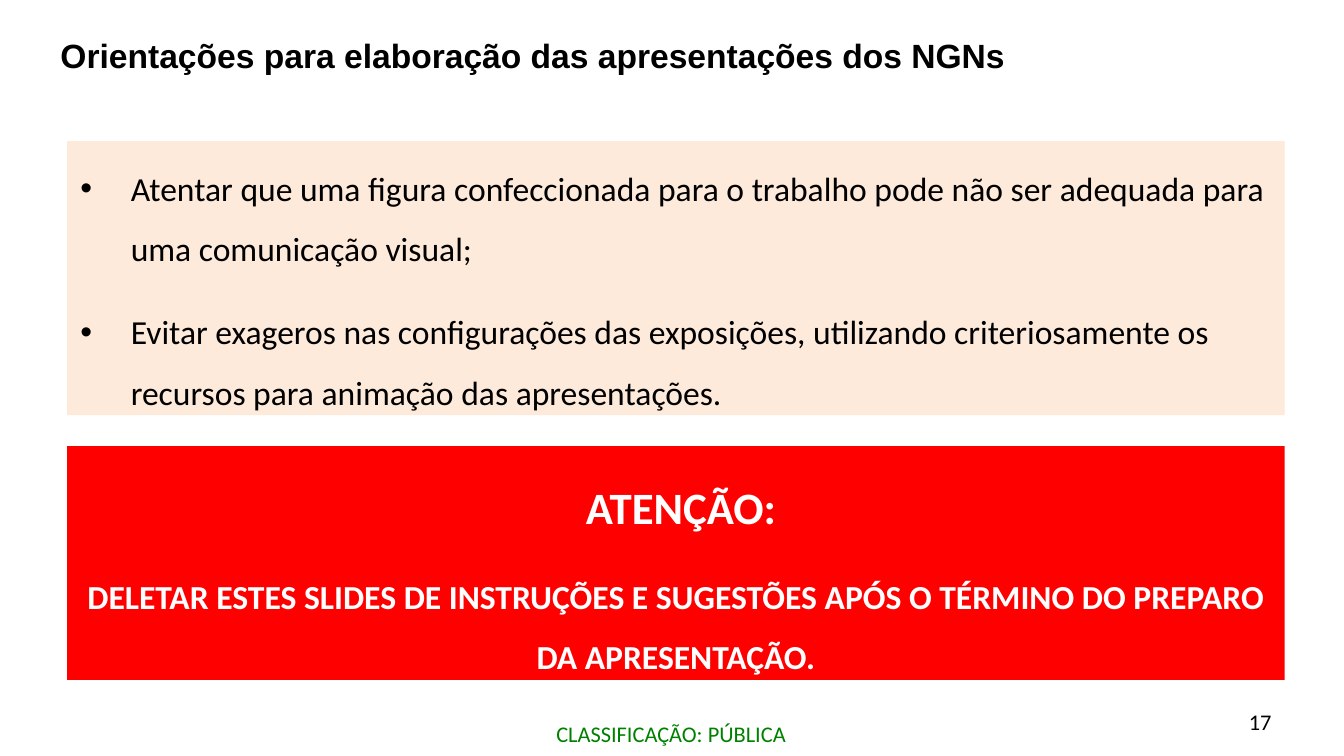
from pptx import Presentation
from pptx.dml.color import RGBColor
from pptx.enum.shapes import MSO_SHAPE
from pptx.enum.text import MSO_ANCHOR, MSO_AUTO_SIZE, PP_ALIGN
from pptx.oxml.xmlchemy import OxmlElement
from pptx.util import Pt

PANEL_LEFT = 36
PANEL_WIDTH = 652.3
BULLET_INDENT = 27


def color(value):
    return RGBColor.from_string(value)


def set_attributes(target, values):
    for name, value in values.items():
        setattr(target, name, value)


def format_frame(shape, anchor=MSO_ANCHOR.TOP, inset_x=7.2, inset_y=3.6):
    set_attributes(shape.text_frame, {
        "word_wrap": True,
        "auto_size": MSO_AUTO_SIZE.NONE,
        "vertical_anchor": anchor,
        "margin_left": Pt(inset_x),
        "margin_right": Pt(inset_x),
        "margin_top": Pt(inset_y),
        "margin_bottom": Pt(inset_y),
    })


def write_line(paragraph, text, size, text_color, bold=False,
               font_name="Calibri", align=PP_ALIGN.LEFT):
    paragraph.alignment = align
    run = paragraph.add_run()
    run.text = text
    set_attributes(run.font, {"name": font_name, "size": Pt(size), "bold": bold})
    run.font.color.rgb = color(text_color)


def add_bullet(paragraph):
    properties = paragraph._p.get_or_add_pPr()
    properties.set("marL", str(Pt(BULLET_INDENT)))
    properties.set("indent", str(-Pt(BULLET_INDENT)))
    font = OxmlElement("a:buFont")
    font.set("typeface", "Arial")
    bullet = OxmlElement("a:buChar")
    bullet.set("char", "•")
    properties.extend([font, bullet])


def add_title(slide, text):
    title = slide.shapes.title
    set_attributes(title, {
        "left": Pt(25.2), "top": Pt(15.1), "width": Pt(550), "height": Pt(28.8),
    })
    format_frame(title)
    write_line(title.text_frame.paragraphs[0], text, 18, "000000", True, "Arial")


def add_label(slide, text, left, top, width, height, text_color, align, **frame):
    label = slide.shapes.add_textbox(Pt(left), Pt(top), Pt(width), Pt(height))
    format_frame(label, **frame)
    write_line(label.text_frame.paragraphs[0], text, 12, text_color, align=align)


def add_panel(slide, top, height, fill, lines, text_color,
              bold=False, bulleted=False, align=PP_ALIGN.LEFT):
    panel = slide.shapes.add_shape(
        MSO_SHAPE.RECTANGLE, Pt(PANEL_LEFT), Pt(top), Pt(PANEL_WIDTH), Pt(height))
    panel.shadow.inherit = False
    panel.fill.solid()
    panel.fill.fore_color.rgb = color(fill)
    panel.line.fill.background()
    format_frame(panel)
    frame = panel.text_frame
    for index, (text, size) in enumerate(lines):
        paragraph = frame.add_paragraph() if index else frame.paragraphs[0]
        set_attributes(paragraph, {
            "line_spacing": 1.5,
            "space_before": Pt(6 if index else 0),
            "space_after": Pt(6),
        })
        if bulleted:
            add_bullet(paragraph)
        write_line(paragraph, text, size, text_color, bold, align=align)


def main():
    presentation = Presentation()
    set_attributes(presentation, {"slide_width": Pt(720), "slide_height": Pt(405)})
    slide = presentation.slides.add_slide(presentation.slide_layouts[5])
    add_title(slide, "Orientações para elaboração das apresentações dos NGNs")
    add_panel(slide, 75.6, 146.9, "FDEADA", [
        ("Atentar que uma figura confeccionada para o trabalho pode não ser "
         "adequada para uma comunicação visual;", 18),
        ("Evitar exageros nas configurações das exposições, utilizando "
         "criteriosamente os recursos para animação das apresentações.", 18),
    ], "000000", bulleted=True)
    add_panel(slide, 239, 125.3, "FF0000", [
        (" ATENÇÃO:", 24),
        ("DELETAR ESTES SLIDES DE INSTRUÇÕES E SUGESTÕES APÓS O TÉRMINO DO "
         "PREPARO DA APRESENTAÇÃO.", 18),
    ], "FFFFFF", bold=True, align=PP_ALIGN.CENTER)
    add_label(slide, "CLASSIFICAÇÃO: PÚBLICA", 298, 386, 126, 14.4,
              "008000", PP_ALIGN.LEFT, inset_x=0, inset_y=0)
    add_label(slide, "17", 520.5, 375.8, 167.8, 21.6,
              "000000", PP_ALIGN.RIGHT, anchor=MSO_ANCHOR.MIDDLE)
    presentation.save("out.pptx")


if __name__ == "__main__":
    main()
